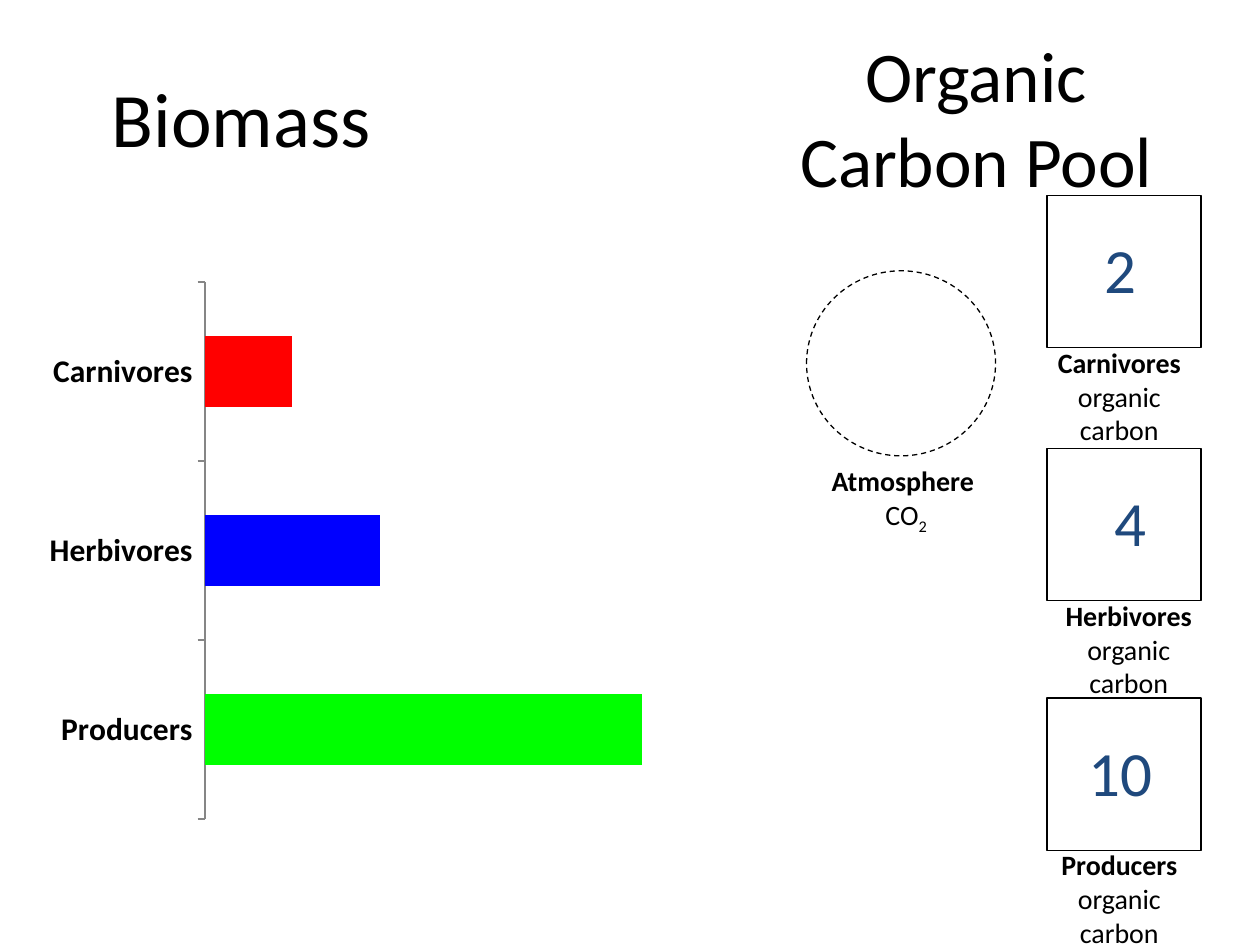
"""Builds a slide comparing biomass with the organic carbon pool per trophic level."""
from dataclasses import dataclass

from lxml import etree
from pptx import Presentation
from pptx.chart.data import CategoryChartData
from pptx.dml.color import RGBColor
from pptx.enum.chart import XL_CHART_TYPE, XL_TICK_LABEL_POSITION, XL_TICK_MARK
from pptx.enum.dml import MSO_LINE
from pptx.enum.shapes import MSO_SHAPE
from pptx.enum.text import MSO_ANCHOR, PP_ALIGN
from pptx.oxml.ns import qn
from pptx.util import Cm, Pt

BAR = XL_CHART_TYPE.BAR_CLUSTERED
LOW = XL_TICK_LABEL_POSITION.LOW
OUTSIDE, NO_TICK = XL_TICK_MARK.OUTSIDE, XL_TICK_MARK.NONE
DASH = MSO_LINE.DASH
RECT, OVAL = MSO_SHAPE.RECTANGLE, MSO_SHAPE.OVAL
TOP, MIDDLE = MSO_ANCHOR.TOP, MSO_ANCHOR.MIDDLE
CENTER = PP_ALIGN.CENTER


@dataclass(frozen=True)
class Theme:
    font: str = "Calibri"
    ink: str = "000000"
    paper: str = "FFFFFF"
    count: str = "1F497D"
    axis: str = "868686"
    series: str = "4F81BD"
    bars: tuple = ("FF0000", "0000FF", "00FF00")
    title: float = 44
    subtitle: float = 40.7
    number: float = 36
    axis_label: float = 18
    label: float = 16
    line: float = 0.75


class SlideBuilder:
    def __init__(self, s, theme):
        self.s, self.theme = s, theme

    def text(self, box, paragraphs, size, color=None, anchor=TOP):
        tf = self.s.shapes.add_textbox(*map(Cm, box)).text_frame
        tf.word_wrap = True
        tf.vertical_anchor = anchor
        for i, runs in enumerate(paragraphs):
            p = tf.add_paragraph() if i else tf.paragraphs[0]
            p.alignment = CENTER
            for text, style in runs:
                r = p.add_run()
                r.text = text
                r.font.name = self.theme.font
                r.font.size = Pt(size)
                r.font.bold = style == "bold"
                r.font.color.rgb = RGBColor.from_string(color or self.theme.ink)
                if style == "sub":
                    r.font._element.set("baseline", "-25000")

    def outline(self, kind, box, fill=None, dash=None):
        sp = self.s.shapes.add_shape(kind, *map(Cm, box))
        sp.shadow.inherit = False
        if fill:
            sp.fill.solid()
            sp.fill.fore_color.rgb = RGBColor.from_string(fill)
        else:
            sp.fill.background()
        sp.line.color.rgb = RGBColor.from_string(self.theme.ink)
        sp.line.width = Pt(self.theme.line)
        if dash:
            sp.line.dash_style = dash

    def bar_chart(self, box, cats, values, top, plot):
        data = CategoryChartData()
        data.categories = cats
        data.add_series("Series 1", values)
        chart = self.s.shapes.add_chart(BAR, *map(Cm, box), data).chart
        chart.has_legend = chart.has_title = False
        chart.font.name = self.theme.font
        chart.font.size = Pt(self.theme.axis_label)
        chart.font.color.rgb = RGBColor.from_string(self.theme.ink)

        axis = chart.category_axis
        axis.reverse_order = True
        axis.major_tick_mark, axis.minor_tick_mark = OUTSIDE, NO_TICK
        axis.tick_label_position = LOW
        axis.tick_labels.font.bold = True
        axis.format.line.color.rgb = RGBColor.from_string(self.theme.axis)
        values_axis = chart.value_axis
        values_axis.minimum_scale, values_axis.maximum_scale = 0, top
        values_axis.has_major_gridlines = False
        values_axis.visible = False

        bars = chart.plots[0]
        bars.gap_width = 150
        bars.vary_by_categories = False
        series = bars.series[0]
        series.format.fill.solid()
        series.format.fill.fore_color.rgb = RGBColor.from_string(self.theme.series)
        for i, color in enumerate(self.theme.bars):
            fill = series.points[i].format.fill
            fill.solid()
            fill.fore_color.rgb = RGBColor.from_string(color)
        self.place_plot(chart, plot)

    def place_plot(self, chart, plot):
        area = chart._chartSpace.find(".//" + qn("c:plotArea"))
        for old in area.findall(qn("c:layout")):
            area.remove(old)
        layout = etree.Element(qn("c:layout"))
        manual = etree.SubElement(layout, qn("c:manualLayout"))
        settings = [("layoutTarget", "inner"), ("xMode", "edge"), ("yMode", "edge")]
        for tag, val in settings + list(zip("xywh", plot)):
            etree.SubElement(manual, qn("c:" + tag)).set("val", str(val))
        area.insert(0, layout)


def main():
    prs = Presentation()
    prs.slide_width, prs.slide_height = Cm(25.4), Cm(19.05)
    theme = Theme()
    b = SlideBuilder(prs.slides.add_slide(prs.slide_layouts[6]), theme)

    b.text((1.27, 0.76, 7.19, 3.18), [[("Biomass", "")]], theme.title, anchor=MIDDLE)
    b.text((15.49, 0.76, 8.38, 3.18), [[("Organic Carbon Pool", "")]],
           theme.subtitle, anchor=MIDDLE)
    b.bar_chart((0.71, 5.46, 14.27, 11.28), ["Carnivores", "Herbivores", "Producers"],
                [20, 40, 100], 120, (0.24, 0.02, 0.74, 0.96))

    b.outline(OVAL, (16.26, 5.46, 3.81, 3.73), theme.paper, DASH)
    b.text((15.93, 9.22, 4.67, 1.63),
           [[("Atmosphere ", "bold")], [("CO", ""), ("2", "sub")]], theme.label)

    pools = [("Carnivores", "2", 3.94, 0), ("Herbivores", "4", 9.04, 0.19),
             ("Producers", "10", 14.07, 0)]
    for name, amount, top, shift in pools:
        b.outline(RECT, (21.11, top, 3.1, 3.07))
        b.text((20.75 + shift, top + 2.9, 3.63, 2.31),
               [[(name, "bold"), (" organic carbon", "")]], theme.label)
        b.text((21.18 + shift, top + 0.59, 2.82, 1.8), [[(amount, "")]],
               theme.number, theme.count)

    prs.save("out.pptx")


if __name__ == "__main__":
    main()
